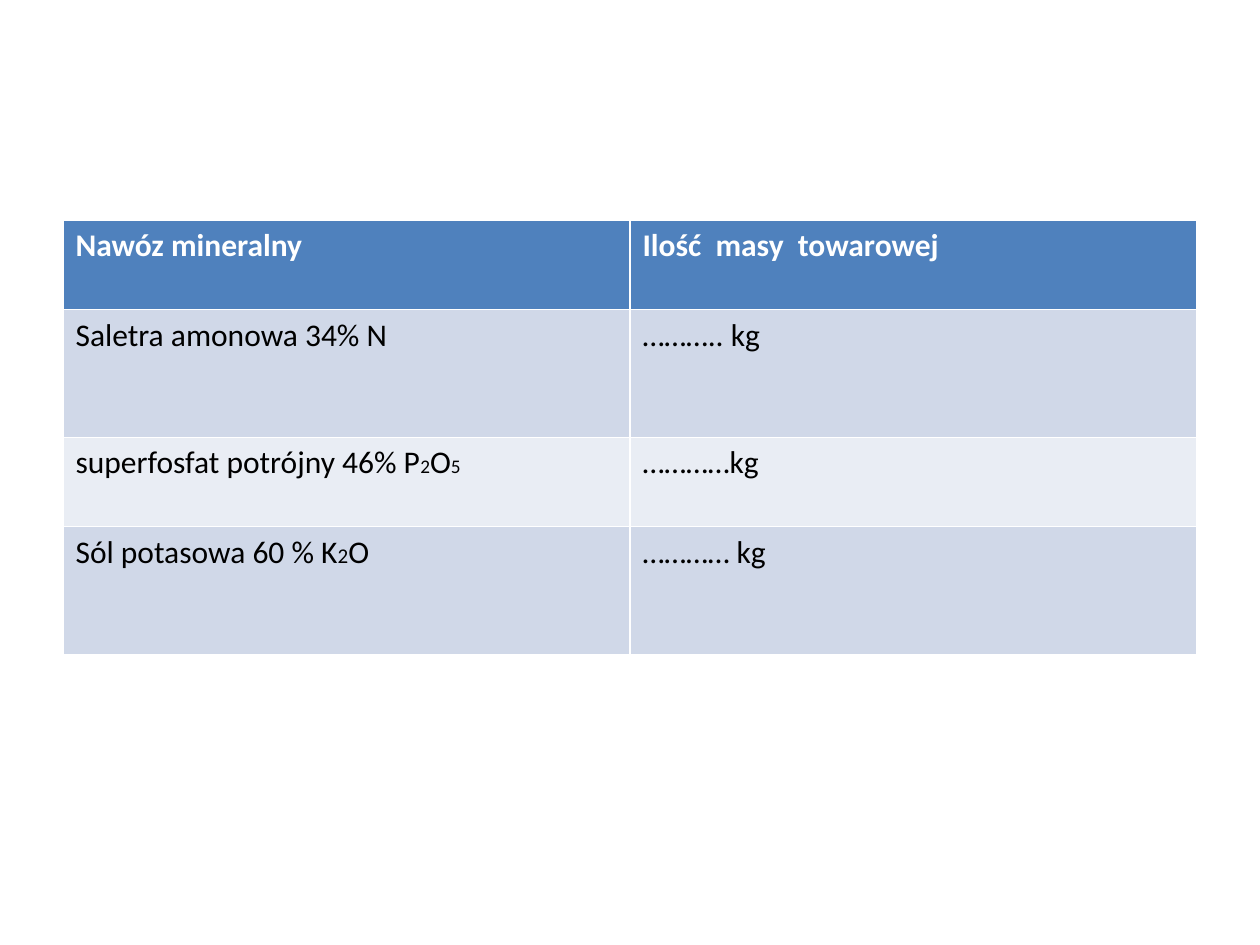
"""Build a slide with a fertilizer table to fill in."""
from dataclasses import dataclass

from pptx import Presentation
from pptx.dml.color import RGBColor
from pptx.util import Pt


@dataclass(frozen=True)
class Theme:
    font: str = "Calibri"
    size: int = 18
    head: str = "4F81BD"
    odd: str = "D0D8E8"
    even: str = "E9EDF4"
    light: str = "FFFFFF"
    dark: str = "000000"


@dataclass(frozen=True)
class Part:
    text: str
    size: int | None = None


@dataclass(frozen=True)
class Row:
    name: tuple[Part, ...]
    mass: str
    height: int


THEME = Theme()
ROWS = (
    Row((Part("Nawóz mineralny"),), "Ilość  masy  towarowej", 51),
    Row((Part("Saletra amonowa 34% N"),), "……….. kg", 73),
    Row((Part("superfosfat potrójny 46% P"), Part("2", 11),
         Part("O"), Part("5", 11)), "…………kg", 51),
    Row((Part("Sól potasowa 60 % K"), Part("2", 12), Part("O")), "………… kg", 73),
)


def fill_cell(cell, parts: tuple[Part, ...], fill: str, head: bool) -> None:
    """Write the parts into a cell and colour it."""
    cell.fill.solid()
    cell.fill.fore_color.rgb = RGBColor.from_string(fill)
    line = cell.text_frame.paragraphs[0]
    line.font.name = THEME.font
    line.font.size = Pt(THEME.size)
    line.font.bold = head
    line.font.color.rgb = RGBColor.from_string(THEME.light if head else THEME.dark)
    for part in parts:
        run = line.add_run()
        run.text = part.text
        if part.size:
            run.font.size = Pt(part.size)


def draw_table(slide, rows: tuple[Row, ...]) -> None:
    """Draw the table with a header and banded rows."""
    total = sum(row.height for row in rows)
    frame = slide.shapes.add_table(len(rows), 2, Pt(36), Pt(126), Pt(648), Pt(total))
    table = frame.table
    for index, row in enumerate(rows):
        table.rows[index].height = Pt(row.height)
        head = index == 0
        fill = THEME.head if head else THEME.odd if index % 2 else THEME.even
        for col, parts in enumerate((row.name, (Part(row.mass),))):
            fill_cell(table.cell(index, col), parts, fill, head)


def main() -> None:
    """Create and save the deck."""
    deck = Presentation()
    deck.slide_width, deck.slide_height = Pt(720), Pt(540)
    slide = deck.slides.add_slide(deck.slide_layouts[6])
    draw_table(slide, ROWS)
    deck.save("out.pptx")


if __name__ == "__main__":
    main()
